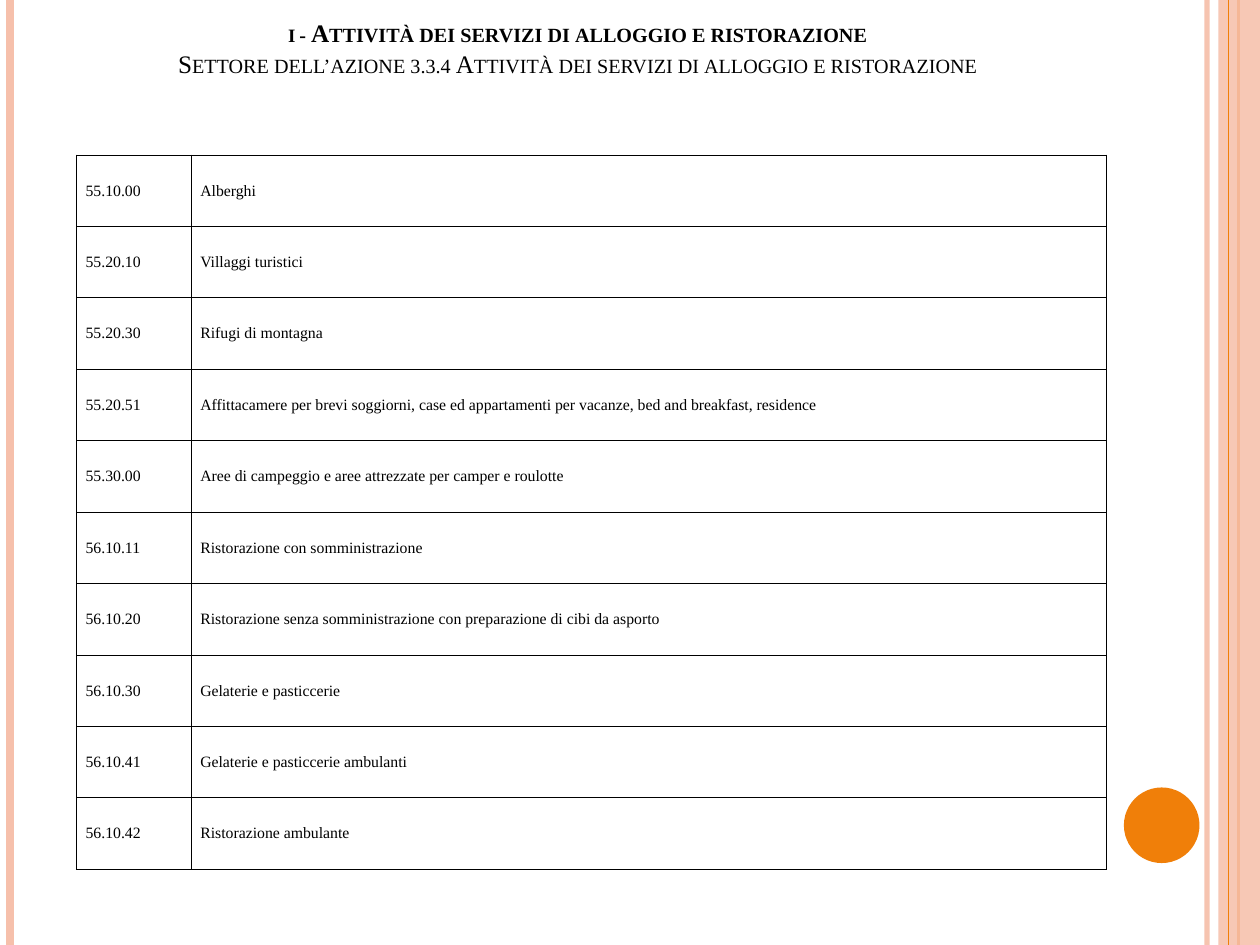
"""Build a slide listing the accommodation and catering activity codes."""
from lxml.etree import SubElement
from pptx import Presentation
from pptx.dml.color import RGBColor
from pptx.enum.shapes import MSO_CONNECTOR as Connector, MSO_SHAPE as Shape
from pptx.enum.text import MSO_ANCHOR as Anchor, PP_ALIGN as Align
from pptx.oxml.ns import qn
from pptx.util import Inches, Pt

FONT = "Times New Roman"
BLACK, ORANGE, PEACH = "000000", "F07F09", "F6C0AB"
ACTIVITIES = [
    ("55.10.00", "Alberghi"),
    ("55.20.10", "Villaggi turistici"),
    ("55.20.30", "Rifugi di montagna"),
    ("55.20.51", "Affittacamere per brevi soggiorni, case ed appartamenti per vacanze, "
                 "bed and breakfast, residence"),
    ("55.30.00", "Aree di campeggio e aree attrezzate per camper e roulotte"),
    ("56.10.11", "Ristorazione con somministrazione"),
    ("56.10.20", "Ristorazione senza somministrazione con preparazione di cibi da asporto"),
    ("56.10.30", "Gelaterie e pasticcerie"),
    ("56.10.41", "Gelaterie e pasticcerie ambulanti"),
    ("56.10.42", "Ristorazione ambulante"),
]


def color(hex_code):
    """Return the colour for a hex string."""
    return RGBColor.from_string(hex_code)


def set_opacity(fill, percent):
    """Make a solid fill partly transparent."""
    tone = fill._xPr.find(qn("a:solidFill"))[0]
    SubElement(tone, qn("a:alpha"), val=str(percent * 1000))


def add_text(para, text, size=9, bold=False, small_caps=False):
    """Append a formatted run to a paragraph."""
    span = para.add_run()
    span.text = text
    span.font.name = FONT
    span.font.size = Pt(size)
    span.font.bold = bold
    span.font.color.rgb = color(BLACK)
    if small_caps:
        span.font._element.set("cap", "small")


def add_stripe(page, x, tone, width, opacity=100):
    """Draw a vertical line down the whole page."""
    stripe = page.shapes.add_connector(
        Connector.STRAIGHT, Inches(x), Inches(0), Inches(x), Inches(7.5))
    stripe.line.color.rgb = color(tone)
    stripe.line.width = Pt(width)
    if opacity < 100:
        set_opacity(stripe.line.fill, opacity)
    SubElement(stripe._element.spPr, qn("a:effectLst"))


def add_block(page, kind, left, top, width, height, tone, opacity=100):
    """Draw a filled shape without outline."""
    block = page.shapes.add_shape(
        kind, Inches(left), Inches(top), Inches(width), Inches(height))
    block.shadow.inherit = False
    block.fill.solid()
    block.fill.fore_color.rgb = color(tone)
    block.line.fill.background()
    if opacity < 100:
        set_opacity(block.fill, opacity)


def add_title(page):
    """Write the two centred title lines."""
    box = page.shapes.add_textbox(Inches(0.5), Inches(0.14), Inches(8.17), Inches(0.5))
    frame = box.text_frame
    frame.word_wrap = True
    frame.margin_left = frame.margin_right = Inches(0.1)
    frame.margin_top = frame.margin_bottom = 0
    para = frame.paragraphs[0]
    para.alignment = Align.CENTER
    add_text(para, "I ", size=10.8, bold=True, small_caps=True)
    add_text(para, "- Attività dei servizi di alloggio e ristorazione",
             size=14.4, bold=True, small_caps=True)
    para.add_line_break()
    add_text(para, "Settore dell’azione 3.3.4 Attività dei servizi di alloggio e ristorazione",
             size=14.4, small_caps=True)


def add_borders(cell):
    """Give a cell thin black borders on all sides."""
    properties = cell._tc.get_or_add_tcPr()
    for position, side in enumerate(("a:lnL", "a:lnR", "a:lnT", "a:lnB")):
        edge = SubElement(properties, qn(side), w=str(Pt(0.5)))
        properties.insert(position, edge)
        SubElement(SubElement(edge, qn("a:solidFill")), qn("a:srgbClr"), val=BLACK)


def add_activity_table(page):
    """Add the table of activity codes and descriptions."""
    table = page.shapes.add_table(
        len(ACTIVITIES), 2, Inches(0.61), Inches(1.23), Inches(8.17), Inches(5.67)).table
    table.first_row = table.horz_banding = False
    for column, width in zip(table.columns, (0.91, 7.26)):
        column.width = Inches(width)
    for row, activity in zip(table.rows, ACTIVITIES):
        for cell, text in zip(row.cells, activity):
            cell.fill.background()
            cell.vertical_anchor = Anchor.MIDDLE
            cell.margin_left = cell.margin_right = Inches(0.07)
            add_text(cell.text_frame.paragraphs[0], text)
            add_borders(cell)


def main():
    """Build and save the deck."""
    deck = Presentation()
    deck.slide_width, deck.slide_height = Inches(10), Inches(7.5)
    page = deck.slides.add_slide(deck.slide_layouts[6])
    add_stripe(page, 9.58, PEACH, 3, opacity=93)
    add_stripe(page, 0.08, PEACH, 4.5)
    add_stripe(page, 9.83, ORANGE, 1.5)
    add_block(page, Shape.RECTANGLE, 9.67, 0, 0.33, 7.5, PEACH, opacity=87)
    add_stripe(page, 9.75, ORANGE, 0.75)
    add_block(page, Shape.OVAL, 8.92, 6.25, 0.6, 0.6, ORANGE)
    add_title(page)
    add_activity_table(page)
    deck.save("out.pptx")


if __name__ == "__main__":
    main()
